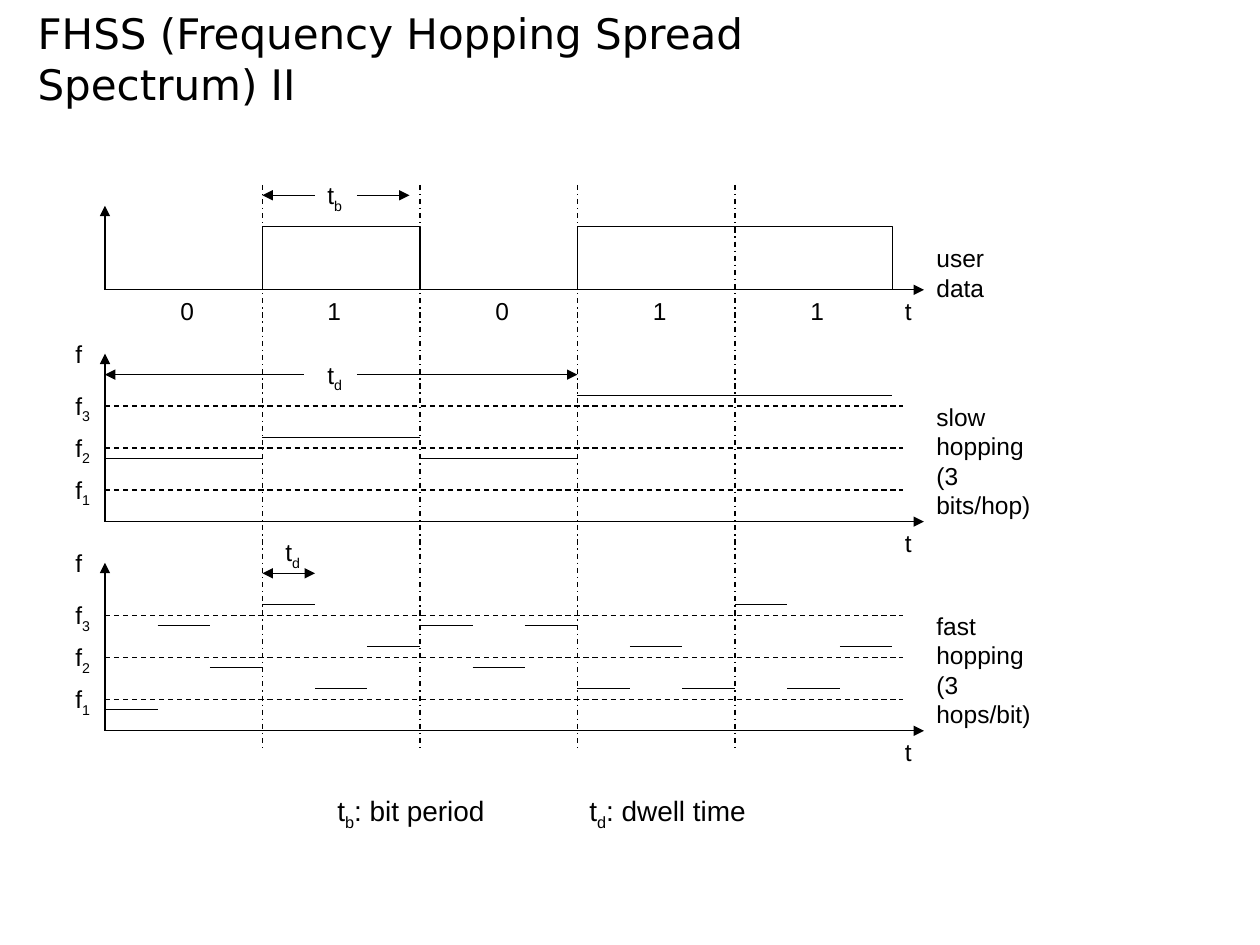
"""Build a slide of timing diagrams for slow and fast frequency hopping."""
import pptx
import pptx.dml.color
import pptx.enum.dml
import pptx.enum.shapes
import pptx.enum.text
import pptx.oxml.ns
import pptx.util
from lxml import etree

BLACK = pptx.dml.color.RGBColor(0, 0, 0)
DASH = pptx.enum.dml.MSO_LINE.DASH
DASH_DOT = pptx.enum.dml.MSO_LINE.DASH_DOT

UNIT = 1 / 12
ORIGIN = 10 * UNIT
BIT = 15
HOP = BIT / 3
AXIS_END = 78
GUIDE_END = 76
USER, SLOW, FAST = 2.3, 4.14, 5.8

TITLE = "FHSS (Frequency Hopping Spread Spectrum) II"
LEGEND = "t|b|: bit period\tt|d|: dwell time"
LEGEND_TAB = 2
AXIS_HEIGHTS = {USER: 8, SLOW: 16, FAST: 16}
FREQUENCY_LABELS = [("f", 18), ("f|3|", 13), ("f|2|", 9), ("f|1|", 5)]
FREQUENCY_GUIDES = [3, 7, 11]
BITS = [("0", 6), ("1", 20), ("0", 36), ("1", 51), ("1", 66)]
PULSES = [(1, 2), (3, 5)]
PULSE_HEIGHT = 6
HOPS = [
    (SLOW, BIT, [6, 8, 6, 12, 12]),
    (FAST, HOP, [2, 10, 6, 12, 4, 8, 10, 6, 10, 4, 8, 4, 12, 4, 8]),
]
SIDE_LABELS = [
    (USER, 5, 0.98, 0.33, ["user data"]),
    (SLOW, 12, 1.17, 0.8, ["slow", "hopping", "(3 bits/hop)"]),
    (FAST, 12, 1.17, 0.8, ["fast", "hopping", "(3 hops/bit)"]),
]
PERIOD_LABELS = [("t|b|", USER, 20, 11), ("t|d|", SLOW, 20, 16), ("t|d|", FAST, 16, 19)]
PERIOD_ARROWS = [
    (USER, 9, 15, 20, "head"),
    (USER, 9, 24, 29, "tail"),
    (SLOW, 14, 0, 19, "head"),
    (SLOW, 14, 24, 45, "tail"),
    (FAST, 15, 15, 20, "head tail"),
]


def place(column, base, rise):
    """Return the slide point at a grid column and a rise above a base line."""
    return ORIGIN + column * UNIT, base - rise * UNIT


def to_lengths(values):
    """Convert inches to slide lengths."""
    return [pptx.util.Inches(value) for value in values]


def style_line(line):
    """Give a line the common colour and width."""
    line.color.rgb = BLACK
    line.width = pptx.util.Pt(0.75)


def add_line(slide, start, end, arrows="", dash=None):
    """Draw a straight line with optional arrowheads and dash style."""
    connector = slide.shapes.add_connector(
        pptx.enum.shapes.MSO_CONNECTOR.STRAIGHT, *to_lengths((*start, *end)))
    style_line(connector.line)
    if dash:
        connector.line.dash_style = dash
    properties = connector._element.spPr
    outline = properties.find(pptx.oxml.ns.qn("a:ln"))
    for end_name in arrows.split():
        arrow = etree.SubElement(outline, pptx.oxml.ns.qn(f"a:{end_name}End"))
        arrow.set("type", "triangle")
    etree.SubElement(properties, pptx.oxml.ns.qn("a:effectLst"))


def add_text(slide, position, size, lines, points=14, font="Arial", wrap=False):
    """Add a text box; parts between bars are subscripts."""
    box = slide.shapes.add_textbox(*to_lengths((*position, *size)))
    frame = box.text_frame
    frame.word_wrap = wrap
    frame.text = "\n".join([""] * len(lines))
    for paragraph, line in zip(frame.paragraphs, lines):
        for index, part in enumerate(line.split("|")):
            if not part:
                continue
            run = paragraph.add_run()
            run.text = part
            run.font.size = pptx.util.Pt(points)
            run.font.name = font
            run.font.color.rgb = BLACK
            if index % 2:
                run._r.get_or_add_rPr().set("baseline", "-25000")
    return box


def add_label(slide, text, column, base, rise):
    """Add a one-line label on the grid."""
    width = 0.32 if "|" in text else 0.31 if text.isdigit() else 0.26
    add_text(slide, place(column, base, rise), (width, 0.33), [text])


def add_pulse(slide, first_bit, last_bit):
    """Draw the outline of a high level over a range of bits."""
    corners = [
        to_lengths(place(bit * BIT, USER, rise))
        for bit, rise in ((first_bit, 0), (first_bit, PULSE_HEIGHT),
                          (last_bit, PULSE_HEIGHT), (last_bit, 0))
    ]
    builder = slide.shapes.build_freeform(*corners[0])
    builder.add_line_segments(corners[1:], close=False)
    pulse = builder.convert_to_shape()
    pulse.shadow.inherit = False
    pulse.fill.background()
    style_line(pulse.line)


def add_legend(slide):
    """Explain the two period symbols, set apart by a tab stop."""
    legend = add_text(slide, (2.58, 6.25), (3.46, 0.37), [LEGEND], 16)
    properties = legend.text_frame.paragraphs[0]._p.get_or_add_pPr()
    tab_list = etree.SubElement(properties, pptx.oxml.ns.qn("a:tabLst"))
    tab = etree.SubElement(tab_list, pptx.oxml.ns.qn("a:tab"))
    tab.set("pos", str(pptx.util.Inches(LEGEND_TAB)))
    tab.set("algn", "l")


def main():
    """Build and save the slide."""
    presentation = pptx.Presentation()
    presentation.slide_width = pptx.util.Inches(10)
    presentation.slide_height = pptx.util.Inches(7.5)
    slide = presentation.slides.add_slide(presentation.slide_layouts[6])

    title = add_text(slide, (0.2, 0), (6.61, 0.91), [TITLE], 24, "DejaVu Sans", True)
    title.text_frame.vertical_anchor = pptx.enum.text.MSO_ANCHOR.BOTTOM

    for base, height in AXIS_HEIGHTS.items():
        corner = place(0, base, 0)
        add_line(slide, corner, place(0, base, height), "tail")
        add_line(slide, corner, place(AXIS_END, base, 0), "tail")
        add_label(slide, "t", 75, base, 0)
    for text, column in BITS:
        add_label(slide, text, column, USER, 0)
    for first_bit, last_bit in PULSES:
        add_pulse(slide, first_bit, last_bit)
    for bit in range(1, len(BITS)):
        add_line(slide, place(bit * BIT, USER, 10), place(bit * BIT, FAST, -2), dash=DASH_DOT)

    for base, step, levels in HOPS:
        for text, rise in FREQUENCY_LABELS:
            add_label(slide, text, -4, base, rise)
        for rise in FREQUENCY_GUIDES:
            add_line(slide, place(0, base, rise), place(GUIDE_END, base, rise), dash=DASH)
        for index, rise in enumerate(levels):
            add_line(slide, place(index * step, base, rise), place((index + 1) * step, base, rise))

    for text, base, column, rise in PERIOD_LABELS:
        add_label(slide, text, column, base, rise)
    for base, rise, start, end, arrows in PERIOD_ARROWS:
        add_line(slide, place(start, base, rise), place(end, base, rise), arrows)
    for base, rise, width, height, lines in SIDE_LABELS:
        add_text(slide, place(AXIS_END, base, rise), (width, height), lines, wrap=True)
    add_legend(slide)

    presentation.save("out.pptx")


if __name__ == "__main__":
    main()
